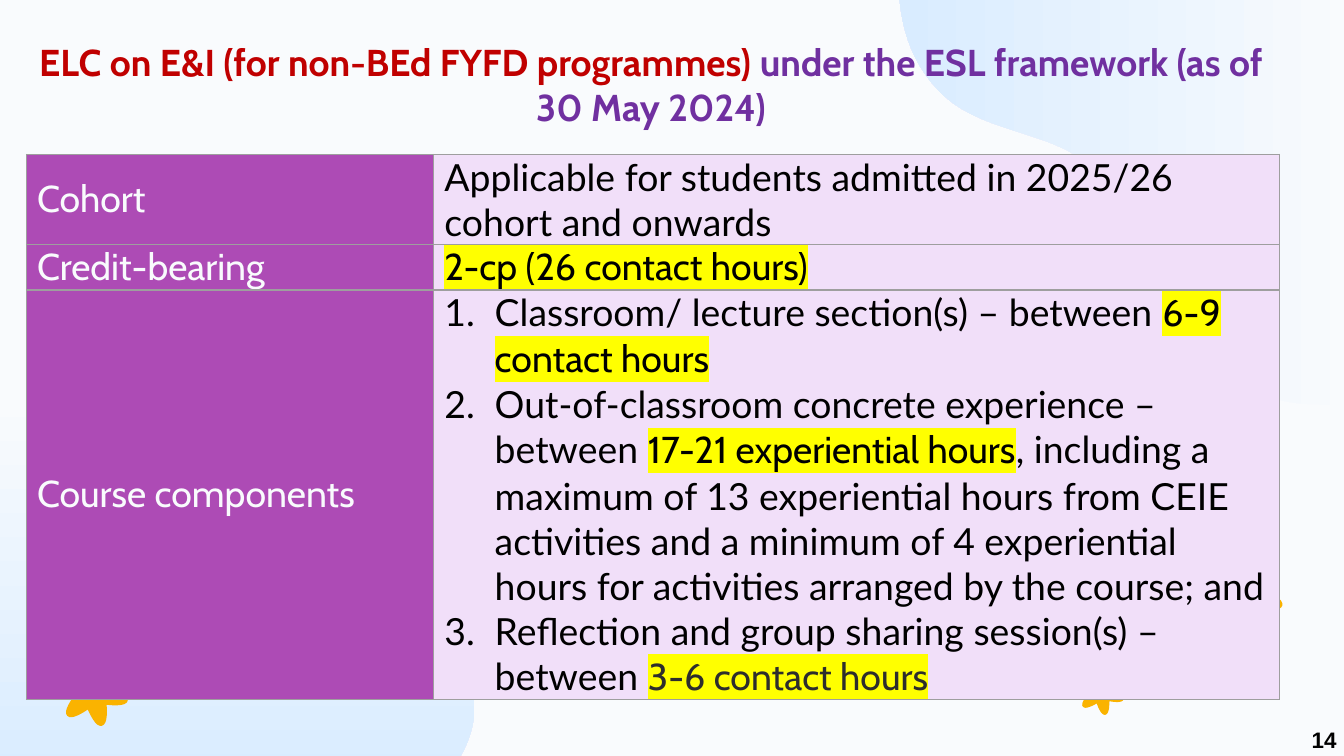
from math import cos, radians, sin

from lxml.etree import SubElement
from pptx import Presentation
from pptx.dml.color import RGBColor
from pptx.enum.shapes import MSO_SHAPE
from pptx.enum.text import MSO_ANCHOR, PP_ALIGN
from pptx.oxml import parse_xml
from pptx.oxml.ns import nsdecls, qn
from pptx.util import Cm, Pt

COLORS = {
    "background": "F9FBFD", "sky": "D9ECFF", "petal": "FAB300", "heart": "E68213",
    "red": "C00000", "purple": "7030A0", "label": "AD4BB5", "detail": "F1DFF9",
    "border": "9E9E9E", "highlight": "FFFF00", "black": "000000", "grey": "2D2D2D",
}


def curve_points(start, curves, steps=12):
    """Return points along a chain of cubic curves (control, control, end)."""
    points = [start]
    for first, second, end in curves:
        origin = points[-1]
        for step in range(1, steps + 1):
            t = step / steps
            weights = ((1 - t) ** 3, 3 * t * (1 - t) ** 2, 3 * t * t * (1 - t), t ** 3)
            points.append(tuple(
                sum(w * p[axis] for w, p in zip(weights, (origin, first, second, end)))
                for axis in (0, 1)))
    return points


def add_run(paragraph, text, font="Lato", color="black", size=20, bold=False, marked=False):
    run = paragraph.add_run()
    run.text = text
    run.font.size = Pt(size)
    run.font.bold = bold
    run.font.color.rgb = RGBColor.from_string(COLORS[color])
    run.font.name = font
    if marked:
        fill = run._r.get_or_add_rPr().find(qn("a:solidFill"))
        fill.addnext(parse_xml(
            f'<a:highlight {nsdecls("a")}><a:srgbClr val="{COLORS["highlight"]}"/></a:highlight>'))


presentation = Presentation()
presentation.slide_width = Cm(25.4)
presentation.slide_height = Cm(14.29)
slide = presentation.slides.add_slide(presentation.slide_layouts[6])
slide.background.fill.solid()
slide.background.fill.fore_color.rgb = RGBColor.from_string(COLORS["background"])

# Background waves: start, curves, closing corners, gradient angle
left_wave = ((8.36, 14.71), [
    ((8.74, 14.38), (8.97, 13.84), (8.97, 13.36)),
    ((8.97, 12.57), (8.33, 10.69), (6.15, 10.31)),
    ((5.33, 10.16), (4.45, 10.13), (3.73, 9.73)),
    ((2.97, 9.3), (2.54, 8.48), (1.83, 7.98)),
    ((1.27, 7.57), (0.53, 7.37), (-0.15, 7.44)),
], [(-0.15, 14.55)], 270)
right_wave = ((16.99, -0.15), [
    ((17.04, 0.61), (17.27, 1.27), (17.83, 1.8)),
    ((18.47, 2.39), (19.41, 2.46), (20.17, 2.84)),
    ((21.16, 3.38), (21.79, 4.39), (22.28, 5.44)),
    ((22.61, 6.12), (22.91, 6.86), (23.52, 7.26)),
    ((24.13, 7.7), (24.94, 7.67), (25.68, 7.62)),
], [(25.68, -0.15)], 180)
for start, curves, corners, angle in (left_wave, right_wave):
    points = [(Cm(x), Cm(y)) for x, y in curve_points(start, curves) + corners]
    builder = slide.shapes.build_freeform(*points[0])
    builder.add_line_segments(points[1:])
    wave = builder.convert_to_shape()
    wave.shadow.inherit = False
    wave.line.fill.background()
    wave.fill.gradient()
    wave.fill.gradient_angle = angle
    for stop, position, color in zip(wave.fill.gradient_stops, (0, 1), ("background", "sky")):
        stop.position = position
        stop.color.rgb = RGBColor.from_string(COLORS[color])

# Flowers: one unit petal, turned six times round the centre
petal = curve_points((0.47, -0.27), [
    ((0.8, -0.21), (1, -0.13), (1, 0)),
    ((1, 0.13), (0.8, 0.21), (0.47, 0.27)),
], 6)
for center_x, center_y, radius, tilt in (
        (23.58, 11.26, 0.68, 16), (1.76, 13.06, 0.68, 16), (20.81, 13.07, 0.45, 20)):
    outline = []
    for index in range(6):
        turn = radians(tilt + 60 * index)
        outline += [(Cm(center_x + radius * (x * cos(turn) - y * sin(turn))),
                     Cm(center_y + radius * (x * sin(turn) + y * cos(turn)))) for x, y in petal]
    builder = slide.shapes.build_freeform(*outline[0])
    builder.add_line_segments(outline[1:])
    flower = builder.convert_to_shape()
    heart_radius = radius * 0.21
    heart = slide.shapes.add_shape(
        MSO_SHAPE.OVAL, Cm(center_x - heart_radius), Cm(center_y - heart_radius),
        Cm(2 * heart_radius), Cm(2 * heart_radius))
    for shape, color in ((flower, "petal"), (heart, "heart")):
        shape.shadow.inherit = False
        shape.line.fill.background()
        shape.fill.solid()
        shape.fill.fore_color.rgb = RGBColor.from_string(COLORS[color])

# Title
title = slide.shapes.add_textbox(Cm(0.43), Cm(0.25), Cm(23.75), Cm(2.67))
title.text_frame.word_wrap = True
title.text_frame.vertical_anchor = MSO_ANCHOR.MIDDLE
paragraph = title.text_frame.paragraphs[0]
paragraph.alignment = PP_ALIGN.CENTER
add_run(paragraph, "ELC on E&I (for non-BEd FYFD programmes) ", "Cabin", "red", bold=True)
add_run(paragraph, "under the ESL framework (as of 30 May 2024)", "Cabin", "purple", bold=True)

# Table: label, then paragraphs of runs (text, options)
marked = {"font": "Cabin", "marked": True}
rows = [
    ("Cohort", [[("Applicable for students admitted in 2025/26 cohort and onwards", {})]]),
    ("Credit-bearing", [[("2-cp (26 contact hours)", marked)]]),
    ("Course components", [
        [("Classroom/ lecture section(s) – between ", {}), ("6-9 contact hours", marked)],
        [("Out-of-classroom concrete experience – between ", {}),
         ("17-21 experiential hours", marked),
         (", including a maximum of 13 experiential hours from CEIE activities and a minimum "
          "of 4 experiential hours for activities arranged by the course; and", {})],
        [("Reflection and group sharing session(s) – between ", {}),
         ("3-6 contact hours", {**marked, "color": "grey"})],
    ]),
]
table = slide.shapes.add_table(3, 2, Cm(0.5), Cm(2.92), Cm(23.68), Cm(10.3)).table
table.first_row = table.horz_banding = False
for column, width in zip(table.columns, (7.7, 15.98)):
    column.width = Cm(width)
for row, height, (label, details) in zip(table.rows, (1.7, 0.86, 7.74), rows):
    row.height = Cm(height)
    label_cell, detail_cell = row.cells
    paragraph = label_cell.text_frame.paragraphs[0]
    paragraph.alignment = PP_ALIGN.JUSTIFY
    add_run(paragraph, label, "Cabin", "background")
    for index, runs in enumerate(details):
        frame = detail_cell.text_frame
        paragraph = frame.add_paragraph() if index else frame.paragraphs[0]
        for text, options in runs:
            add_run(paragraph, text, **options)
        if len(details) > 1:
            properties = paragraph._p.get_or_add_pPr()
            properties.set("marL", str(Cm(0.95)))
            properties.set("indent", str(-Cm(0.95)))
            bullet_color = SubElement(properties, qn("a:buClr"))
            SubElement(bullet_color, qn("a:srgbClr"), val=COLORS["black"])
            SubElement(properties, qn("a:buAutoNum"), type="arabicPeriod")
    for cell, color in ((label_cell, "label"), (detail_cell, "detail")):
        cell.vertical_anchor = MSO_ANCHOR.MIDDLE
        cell.margin_left = cell.margin_right = Cm(0.2)
        cell.margin_top = cell.margin_bottom = 0
        cell.fill.solid()
        cell.fill.fore_color.rgb = RGBColor.from_string(COLORS[color])
        for position, side in enumerate("LRTB"):
            cell._tc.get_or_add_tcPr().insert(position, parse_xml(
                f'<a:ln{side} {nsdecls("a")} w="{Pt(0.75)}"><a:solidFill>'
                f'<a:srgbClr val="{COLORS["border"]}"/></a:solidFill></a:ln{side}>'))

# Page number
page_number = slide.shapes.add_textbox(Cm(24.54), Cm(13.61), Cm(1.32), Cm(0.76))
page_number.text_frame.word_wrap = True
add_run(page_number.text_frame.paragraphs[0], "14", "Arial", size=12, bold=True)

presentation.save("out.pptx")
